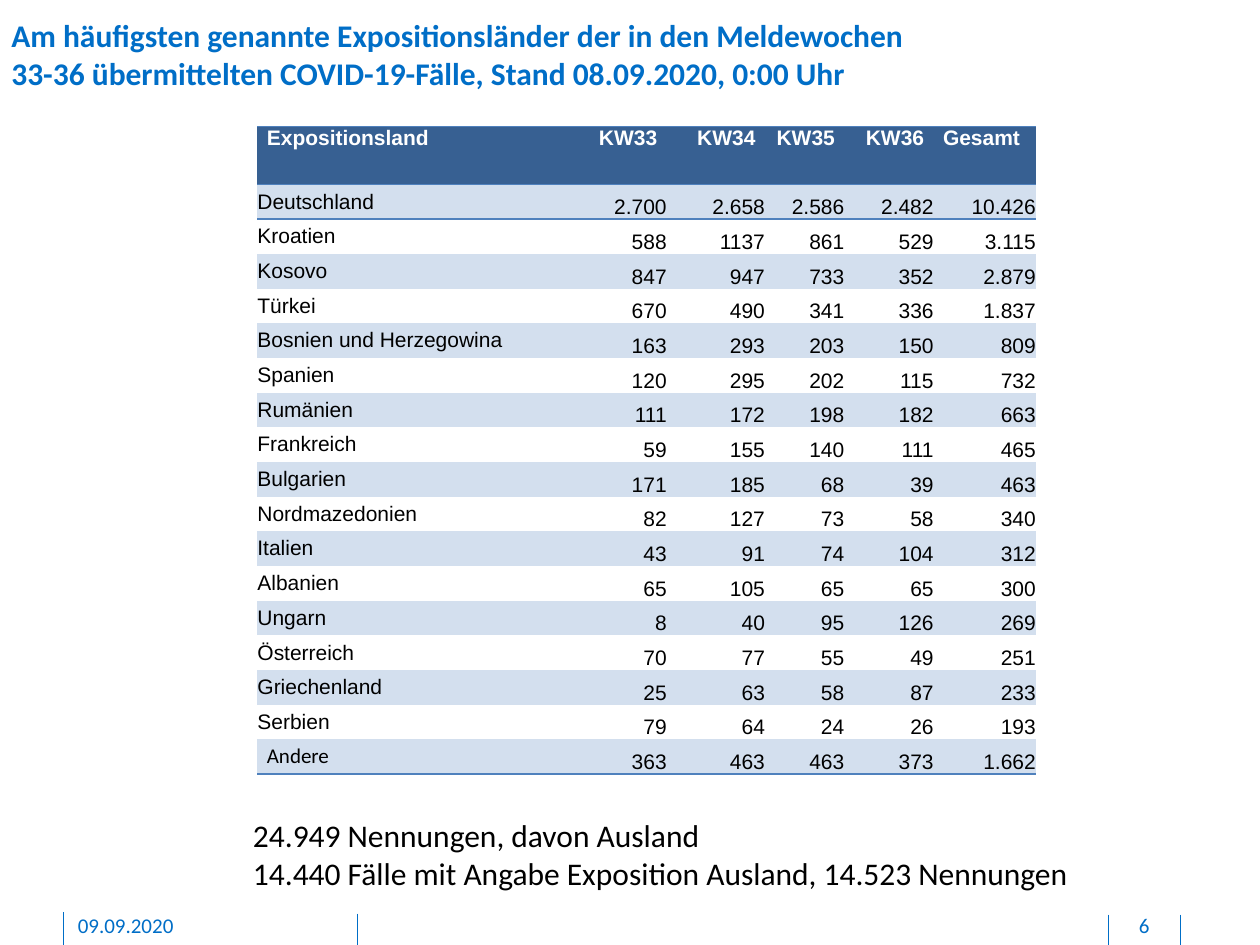
from lxml import etree
from pptx import Presentation
from pptx.dml.color import RGBColor
from pptx.enum.shapes import MSO_CONNECTOR
from pptx.enum.text import MSO_ANCHOR, PP_ALIGN
from pptx.oxml.ns import qn
from pptx.util import Cm, Pt

LEFT, MID, RIGHT = PP_ALIGN.LEFT, PP_ALIGN.CENTER, PP_ALIGN.RIGHT
TOP, CENTRE, BASE = MSO_ANCHOR.TOP, MSO_ANCHOR.MIDDLE, MSO_ANCHOR.BOTTOM
STRAIGHT = MSO_CONNECTOR.STRAIGHT
NO_STYLE = "{2D5ABB26-0587-4C30-8999-92F81FD0307C}"

COLORS = {
    "blue": "006EC7",
    "head": "376092",
    "band": "D3DFEE",
    "rule": "4F81BD",
    "white": "FFFFFF",
    "black": "000000",
}

TITLE = ("Am häufigsten genannte Expositionsländer der in den Meldewochen "
         "33-36 übermittelten COVID-19-Fälle, Stand 08.09.2020, 0:00 Uhr")
NOTE = ("24.949 Nennungen, davon Ausland\n"
        "14.440 Fälle mit Angabe Exposition Ausland, 14.523 Nennungen")

HEAD = ("Expositionsland", "KW33", "KW34", "KW35", "KW36", "Gesamt")
ROWS = (
    ("Deutschland", "2.700", "2.658", "2.586", "2.482", "10.426"),
    ("Kroatien", "588", "1137", "861", "529", "3.115"),
    ("Kosovo", "847", "947", "733", "352", "2.879"),
    ("Türkei", "670", "490", "341", "336", "1.837"),
    ("Bosnien und Herzegowina", "163", "293", "203", "150", "809"),
    ("Spanien", "120", "295", "202", "115", "732"),
    ("Rumänien", "111", "172", "198", "182", "663"),
    ("Frankreich", "59", "155", "140", "111", "465"),
    ("Bulgarien", "171", "185", "68", "39", "463"),
    ("Nordmazedonien", "82", "127", "73", "58", "340"),
    ("Italien", "43", "91", "74", "104", "312"),
    ("Albanien", "65", "105", "65", "65", "300"),
    ("Ungarn", "8", "40", "95", "126", "269"),
    ("Österreich", "70", "77", "55", "49", "251"),
    ("Griechenland", "25", "63", "58", "87", "233"),
    ("Serbien", "79", "64", "24", "26", "193"),
    ("Andere", "363", "463", "463", "373", "1.662"),
)
WIDTHS = (6.45, 1.8, 1.98, 1.6, 1.8, 2.06)


def rgb(name):
    return RGBColor.from_string(COLORS[name])


def style(frame, size, color, font="Calibri", bold=False, align=LEFT):
    for para in frame.paragraphs:
        para.alignment = align
        for run in para.runs:
            run.font.size = Pt(size)
            run.font.name = font
            run.font.bold = bold
            run.font.color.rgb = rgb(color)


def add_text(slide, text, box, pads=(0, 0, 0, 0), wrap=True, **look):
    frame = slide.shapes.add_textbox(*map(Cm, box)).text_frame
    frame.word_wrap = wrap
    (frame.margin_left, frame.margin_top,
     frame.margin_right, frame.margin_bottom) = map(Cm, pads)
    frame.text = text
    style(frame, **look)


def add_tick(slide, x, top):
    line = slide.shapes.add_connector(STRAIGHT, Cm(x), Cm(top), Cm(x), Cm(19.05))
    line.line.color.rgb = rgb("blue")
    line.line.width = Pt(0.5)
    etree.SubElement(line._element.spPr, qn("a:effectLst"))


def add_rules(cell, sides):
    # Borders stand before the fill in the cell properties
    props = cell._tc.get_or_add_tcPr()
    for i, side in enumerate(sides):
        rule = etree.Element(qn("a:ln" + side), w=str(Pt(1)))
        fill = etree.SubElement(rule, qn("a:solidFill"))
        etree.SubElement(fill, qn("a:srgbClr"), val=COLORS["rule"])
        props.insert(i, rule)


def fill_cell(cell, text, row, col):
    head, last = row == 0, row == len(ROWS)
    first = col == 0
    cell.text = text
    pad = Cm(0.19) if head or (last and first) else 0
    cell.margin_left = cell.margin_right = pad
    cell.margin_top = cell.margin_bottom = 0
    cell.vertical_anchor = TOP if head else CENTRE if first else BASE
    plain = first or (head and col == len(HEAD) - 1)
    style(cell.text_frame, 12, "white" if head else "black",
          font="Calibri" if last and first else "Arial",
          bold=head, align=LEFT if plain else RIGHT)
    if head or row % 2:
        cell.fill.solid()
        cell.fill.fore_color.rgb = rgb("head" if head else "band")
    else:
        cell.fill.background()
    add_rules(cell, "TB" if head else "T" if row == 1 else "B" if last else "")


def add_grid(slide):
    heights = [1.17] + [0.7] * len(ROWS)
    frame = slide.shapes.add_table(
        len(heights), len(WIDTHS), Cm(5.19), Cm(2.55),
        Cm(sum(WIDTHS)), Cm(sum(heights)))
    table = frame.table
    table.first_row = table.horz_banding = False
    table._tbl.tblPr.find(qn("a:tableStyleId")).text = NO_STYLE
    for col, width in zip(table.columns, WIDTHS):
        col.width = Cm(width)
    for r, (height, texts) in enumerate(zip(heights, (HEAD,) + ROWS)):
        table.rows[r].height = Cm(height)
        for c, text in enumerate(texts):
            fill_cell(table.cell(r, c), text, r, c)


def main():
    deck = Presentation()
    deck.slide_width, deck.slide_height = Cm(25.4), Cm(19.05)
    slide = deck.slides.add_slide(deck.slide_layouts[6])

    # Footer ticks
    for x, top in ((7.21, 18.42), (1.27, 18.39), (23.8, 18.44), (22.35, 18.44)):
        add_tick(slide, x, top)

    # Title
    add_text(slide, TITLE, (0.23, 0.33, 18.42, 1.55),
             size=18, color="blue", bold=True)

    # Date and page number
    foot = {"pads": (0, 0, 0, 0.13), "size": 12, "color": "blue"}
    add_text(slide, "09.09.2020", (1.57, 18.39, 5.16, 0.53), **foot)
    add_text(slide, "6", (22.38, 18.39, 1.37, 0.53), align=MID, **foot)

    # Countries by week
    add_grid(slide)

    # Totals
    add_text(slide, NOTE, (4.85, 16.33, 17.3, 1.8),
             pads=(0.25, 0.13, 0.25, 0.13), wrap=False, size=18, color="black")

    deck.save("out.pptx")


if __name__ == "__main__":
    main()
